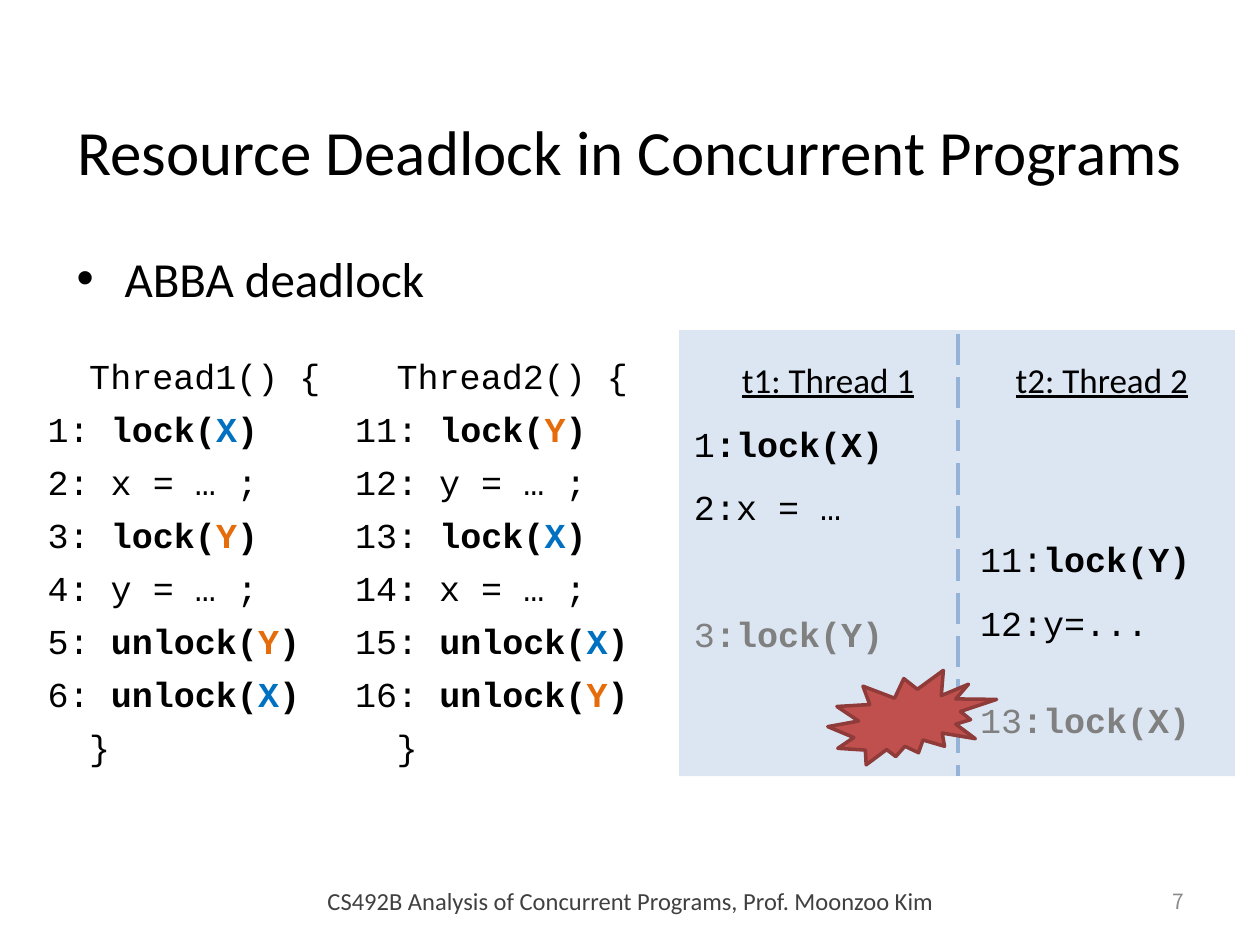
from dataclasses import dataclass

from lxml import etree
from pptx import Presentation
from pptx.dml.color import RGBColor
from pptx.enum.dml import MSO_LINE
from pptx.enum.shapes import MSO_CONNECTOR, MSO_SHAPE
from pptx.enum.text import MSO_ANCHOR, PP_ALIGN
from pptx.oxml.ns import qn
from pptx.util import Inches, Pt

RECT, BURST = MSO_SHAPE.RECTANGLE, MSO_SHAPE.EXPLOSION2
STRAIGHT, LONG_DASH = MSO_CONNECTOR.STRAIGHT, MSO_LINE.LONG_DASH
TOP, MIDDLE = MSO_ANCHOR.TOP, MSO_ANCHOR.MIDDLE
LEFT, CENTER, RIGHT = PP_ALIGN.LEFT, PP_ALIGN.CENTER, PP_ALIGN.RIGHT


@dataclass(frozen=True)
class Theme:
    sans: str = "Calibri"
    mono: str = "Courier New"
    number_font: str = "Noto Sans CJK KR"
    black: str = "000000"
    blocked: str = "808080"
    footer: str = "404040"
    number: str = "8C8C8C"
    lock_x: str = "0070C0"
    lock_y: str = "E46C0A"
    panel: str = "DCE6F2"
    divider: str = "95B3D7"
    burst: str = "C0504D"
    burst_line: str = "8E3B39"
    title_size: int = 36
    body_size: int = 28
    code_size: int = 20
    footer_size: int = 14
    number_size: int = 12
    code_pitch: float = 30.25
    trace_pitch: float = 36.5


T = Theme()
LOCK_COLORS = {"X": T.lock_x, "Y": T.lock_y}

# Statements are either plain text or an (operation, lock) pair
THREADS = [
    ("Thread1", 0.28, 1, [("lock", "X"), "x = … ;", ("lock", "Y"), "y = … ;",
                          ("unlock", "Y"), ("unlock", "X")]),
    ("Thread2", 2.72, 11, [("lock", "Y"), "y = … ;", ("lock", "X"), "x = … ;",
                           ("unlock", "X"), ("unlock", "Y")]),
]

# Trace rows: plain part, bold part, colour, space before in points
TRACES = [
    ("t1: Thread 1", (5.41, 2.62, 2.17, 3.13), LEFT, 0.38,
     [("1", ":lock(X)", T.black, 0), ("2:x = …", "", T.black, 0),
      ("3", ":lock(Y)", T.blocked, 36)]),
    ("t2: Thread 2", (7.68, 2.62, 2.13, 3.81), CENTER, 0,
     [("11:", "lock(Y)", T.black, 66), ("12:y=...", "", T.black, 0),
      ("13", ":lock(X)", T.blocked, 19)]),
]


def rgb(value):
    return RGBColor.from_string(value)


def add_text(s, box, anchor=TOP, margin_top=0.05):
    tf = s.shapes.add_textbox(*map(Inches, box)).text_frame
    formats = {"word_wrap": True, "vertical_anchor": anchor,
               "margin_top": Inches(margin_top)}
    for name, value in formats.items():
        setattr(tf, name, value)
    return tf


def add_paragraph(tf, runs, indent=0, hanging=0, **formats):
    """Fill one paragraph; each run is (text, font format dict)."""
    p = tf.paragraphs[0]
    if p.runs:
        p = tf.add_paragraph()
    for name, value in formats.items():
        setattr(p, name, value)
    if indent:
        pPr = p._p.get_or_add_pPr()
        pPr.set("marL", str(Inches(indent)))
        pPr.set("indent", str(-Inches(hanging)))
    for text, font in runs:
        r = p.add_run()
        r.text = text
        style = {"name": T.sans, "size": T.code_size, "color": T.black} | font
        r.font.color.rgb = rgb(style.pop("color"))
        style["size"] = Pt(style["size"])
        for name, value in style.items():
            setattr(r.font, name, value)
    return p


def add_label(s, box, text, align, **font):
    tf = add_text(s, box, MIDDLE)
    add_paragraph(tf, [(text, font)], alignment=align)


def add_bullet(s, box, text):
    tf = add_text(s, box)
    p = add_paragraph(tf, [(text, {"size": T.body_size})], 0.38, 0.38)
    pPr = p._p.get_or_add_pPr()
    etree.SubElement(pPr, qn("a:buFont")).set("typeface", "Arial")
    etree.SubElement(pPr, qn("a:buChar")).set("char", "•")


def add_shape(s, kind, box, fill, line=None):
    sp = s.shapes.add_shape(kind, *map(Inches, box))
    sp.shadow.inherit = False
    sp.fill.solid()
    sp.fill.fore_color.rgb = rgb(fill)
    if line:
        sp.line.color.rgb = rgb(line)
        sp.line.width = Pt(2)
    else:
        sp.line.fill.background()


def add_divider(s, x, top, bottom):
    line = s.shapes.add_connector(STRAIGHT, *map(Inches, (x, top, x, bottom)))
    line.line.color.rgb = rgb(T.divider)
    line.line.width = Pt(2.25)
    line.line.dash_style = LONG_DASH
    etree.SubElement(line._element.spPr, qn("a:effectLst"))


def add_code(s, name, left, first, statements):
    tf = add_text(s, (left, 2.65, 2.52, 3.47), margin_top=0.08)
    mono, bold = {"name": T.mono}, {"name": T.mono, "bold": True}
    spacing = {"line_spacing": Pt(T.code_pitch)}
    add_paragraph(tf, [(f"{name}() {{", mono)], 0.33, **spacing)
    for number, statement in enumerate(statements, first):
        if isinstance(statement, str):
            runs = [(f"{number}: {statement}", mono)]
        else:
            operation, lock = statement
            runs = [(f"{number}: ", mono), (f"{operation}(", bold),
                    (lock, bold | {"color": LOCK_COLORS[lock]}), (")", bold)]
        add_paragraph(tf, runs, **spacing)
    add_paragraph(tf, [("}", mono)], 0.33, **spacing)


def add_trace(s, heading, box, align, indent, rows):
    tf = add_text(s, box)
    spacing = {"line_spacing": Pt(T.trace_pitch)}
    add_paragraph(tf, [(heading, {"underline": True})], indent,
                  alignment=align, **spacing)
    for plain, strong, color, gap in rows:
        font = {"name": T.mono, "color": color}
        runs = [(plain, font)]
        if strong:
            runs.append((strong, font | {"bold": True}))
        add_paragraph(tf, runs, space_before=Pt(gap), **spacing)


def main():
    prs = Presentation()
    prs.slide_width, prs.slide_height = Inches(10), Inches(7.5)
    s = prs.slides.add_slide(prs.slide_layouts[6])

    # Panel behind the execution trace
    add_shape(s, RECT, (5.39, 2.62, 4.41, 3.54), T.panel)

    # Title and topic
    add_label(s, (0.5, 0.6, 9, 1.18), "Resource Deadlock in Concurrent Programs",
              CENTER, size=T.title_size)
    add_bullet(s, (0.51, 1.92, 8.99, 0.65), "ABBA deadlock")

    # Execution trace and thread code
    for trace in TRACES:
        add_trace(s, *trace)
    for thread in THREADS:
        add_code(s, *thread)

    # Divider and deadlock burst
    add_divider(s, 7.6, 2.65, 6.16)
    add_shape(s, BURST, (6.57, 5.32, 1.34, 0.75), T.burst, T.burst_line)

    # Footer
    add_label(s, (8.46, 6.95, 1.04, 0.4), "7", RIGHT, name=T.number_font,
              size=T.number_size, color=T.number)
    add_label(s, (2.09, 6.95, 5.83, 0.4),
              "CS492B Analysis of Concurrent Programs, Prof. Moonzoo Kim",
              CENTER, size=T.footer_size, color=T.footer)

    prs.save("out.pptx")


if __name__ == "__main__":
    main()
